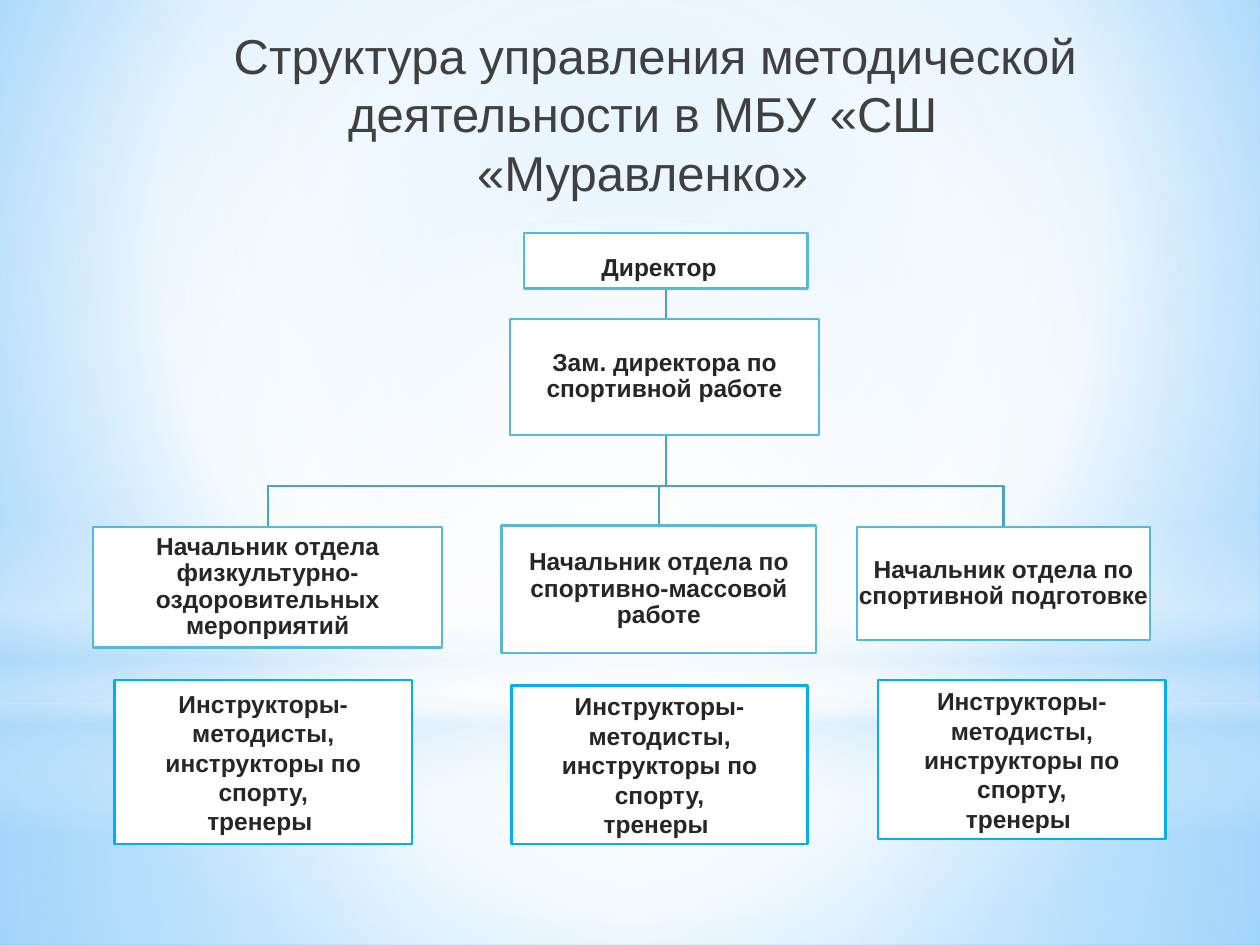
from lxml import etree
from pptx import Presentation
from pptx.dml.color import RGBColor
from pptx.enum.shapes import MSO_SHAPE
from pptx.enum.text import MSO_ANCHOR, PP_ALIGN
from pptx.oxml.ns import qn
from pptx.util import Inches, Pt

# Content: text, box (left, top, width, height)
TITLE = "Структура управления методической деятельности в МБУ «СШ «Муравленко»"
DIRECTOR = ("Директор", (4.16, 1.85, 2.25, 0.44))
DEPUTY = ("Зам. директора по спортивной работе", (4.05, 2.53, 2.45, 0.92))
HEADS = [
    ("Начальник отдела физкультурно-оздоровительных мероприятий", (0.74, 4.18, 2.77, 0.96)),
    ("Начальник отдела по спортивно-массовой работе", (3.98, 4.17, 2.5, 1.01)),
    ("Начальник отдела по спортивной подготовке", (6.8, 4.18, 2.33, 0.9)),
]
STAFF = ["Инструкторы-методисты, инструкторы по спорту,", "тренеры "]
STAFF_BOXES = [(0.91, 5.4, 2.36, 1.3), (4.06, 5.44, 2.35, 1.26), (6.97, 5.4, 2.28, 1.26)]

THEME = dict(
    font="Arial", title_size=28, box_size=14, title="404040", text="262626",
    box="FFFFFF", head_line="55B9DD", staff_line="00B0F0", branch="4BA3C3", line_width=1.25,
)

# Gradients: stops (position, colour, opacity); centre as left, top, right, bottom insets
CENTRE = (50, 50, 50, 50)
BACKDROP = ([(0, "9ED5FF", 100), (60, "FFFFFF", 100), (100, "5BB9FF", 100)], (20, 10, 20, 60))
GLOWS = [
    (MSO_SHAPE.RECTANGLE, (0, 5.58, 10, 1.92),
     [(0, "FFFFFF", 91), (37, "FFFFFF", 76), (100, "B4DCFA", 79)], CENTRE),
    (MSO_SHAPE.RECTANGLE, (0, 0, 10, 5.58),
     [(0, "FFFFFF", 89), (48, "FFFFFF", 62), (100, "B4DCFA", 79)], CENTRE),
    (MSO_SHAPE.RECTANGLE, (0, 4.12, 10, 2.5),
     [(0, "FFFFFF", 0), (29, "FFFFFF", 30), (45, "B4DCFA", 40),
      (55, "FFFFFF", 26), (65, "B4DCFA", 60), (100, "FFFFFF", 0)], None),
    (MSO_SHAPE.OVAL, (0, 1.75, 10, 5.58), [(0, "FFFFFF", 100), (56, "FFFFFF", 0)], CENTRE),
]


def colour(name):
    return RGBColor.from_string(THEME[name])


def set_gradient(fill, owner, stops, centre):
    """Radial gradient around centre, or a vertical one without it."""
    fill.solid()
    solid = next(owner.iter(qn("a:solidFill")))
    gradient = etree.Element(qn("a:gradFill"), rotWithShape="1")
    stop_list = etree.SubElement(gradient, qn("a:gsLst"))
    for position, rgb, opacity in stops:
        stop = etree.SubElement(stop_list, qn("a:gs"), pos=str(position * 1000))
        tint = etree.SubElement(stop, qn("a:srgbClr"), val=rgb)
        etree.SubElement(tint, qn("a:alpha"), val=str(opacity * 1000))
    if centre:
        radial = etree.SubElement(gradient, qn("a:path"), path="circle")
        sides = {side: str(inset * 1000) for side, inset in zip("ltrb", centre)}
        etree.SubElement(radial, qn("a:fillToRect"), **sides)
    else:
        etree.SubElement(gradient, qn("a:lin"), ang="5400000", scaled="0")
    solid.getparent().replace(solid, gradient)


def add_shape(slide, kind, box):
    shape = slide.shapes.add_shape(kind, *map(Inches, box))
    shape.shadow.inherit = False
    return shape


def write(frame, lines, size, text_colour, bold=False, spacing=1.0):
    frame.word_wrap = True
    frame.text = "\n".join(lines)
    for paragraph in frame.paragraphs:
        paragraph.alignment = PP_ALIGN.CENTER
        paragraph.line_spacing = spacing
        font = paragraph.font
        font.name, font.size, font.bold = THEME["font"], Pt(size), bold
        font.color.rgb = colour(text_colour)


def add_box(slide, lines, box, line, spacing=1.0, inset=None):
    shape = add_shape(slide, MSO_SHAPE.RECTANGLE, box)
    shape.fill.solid()
    shape.fill.fore_color.rgb = colour("box")
    shape.line.color.rgb = colour(line)
    shape.line.width = Pt(THEME["line_width"])
    frame = shape.text_frame
    frame.vertical_anchor = MSO_ANCHOR.MIDDLE
    if inset is not None:
        frame.margin_left = frame.margin_right = Inches(inset)
        frame.margin_top = frame.margin_bottom = Inches(inset)
    write(frame, lines, THEME["box_size"], "text", True, spacing)
    return frame


def add_branch(slide, start, turn, end):
    points = [start, (start[0], turn), (end[0], turn), end]
    corners = [(Inches(x), Inches(y)) for x, y in points]
    builder = slide.shapes.build_freeform(*corners[0], scale=1.0)
    builder.add_line_segments(corners[1:], close=False)
    branch = builder.convert_to_shape()
    branch.shadow.inherit = False
    branch.fill.background()
    branch.line.color.rgb = colour("branch")
    branch.line.width = Pt(THEME["line_width"])


def main():
    deck = Presentation()
    deck.slide_width, deck.slide_height = Inches(10), Inches(7.5)
    slide = deck.slides.add_slide(deck.slide_layouts[6])

    # Backdrop and glows
    set_gradient(slide.background.fill, slide.element, *BACKDROP)
    for kind, box, stops, centre in GLOWS:
        glow = add_shape(slide, kind, box)
        glow.line.fill.background()
        set_gradient(glow.fill, glow.element, stops, centre)

    # Title, first line set slightly to the right
    title = slide.shapes.add_textbox(*map(Inches, (1.54, 0.15, 7.12, 1.25))).text_frame
    write(title, [TITLE], THEME["title_size"], "title")
    title.paragraphs[0]._p.get_or_add_pPr().set("indent", str(Inches(0.2)))

    # Branches from the director down to each department head
    left, top, width, height = DIRECTOR[1]
    start = (left + width / 2, top + height)
    for _, (left, top, width, _) in HEADS:
        add_branch(slide, start, 3.86, (left + width / 2, top))

    # Management boxes
    for text, box in [DIRECTOR, *HEADS, DEPUTY]:
        frame = add_box(slide, [text], box, "head_line", spacing=0.9, inset=0.01)
        if text == DIRECTOR[0]:
            tail = frame.paragraphs[0].add_run()
            tail.text = " "
            tail.font.size = Pt(THEME["title_size"])

    # Staff boxes
    for box in STAFF_BOXES:
        add_box(slide, STAFF, box, "staff_line")

    deck.save("out.pptx")


if __name__ == "__main__":
    main()
